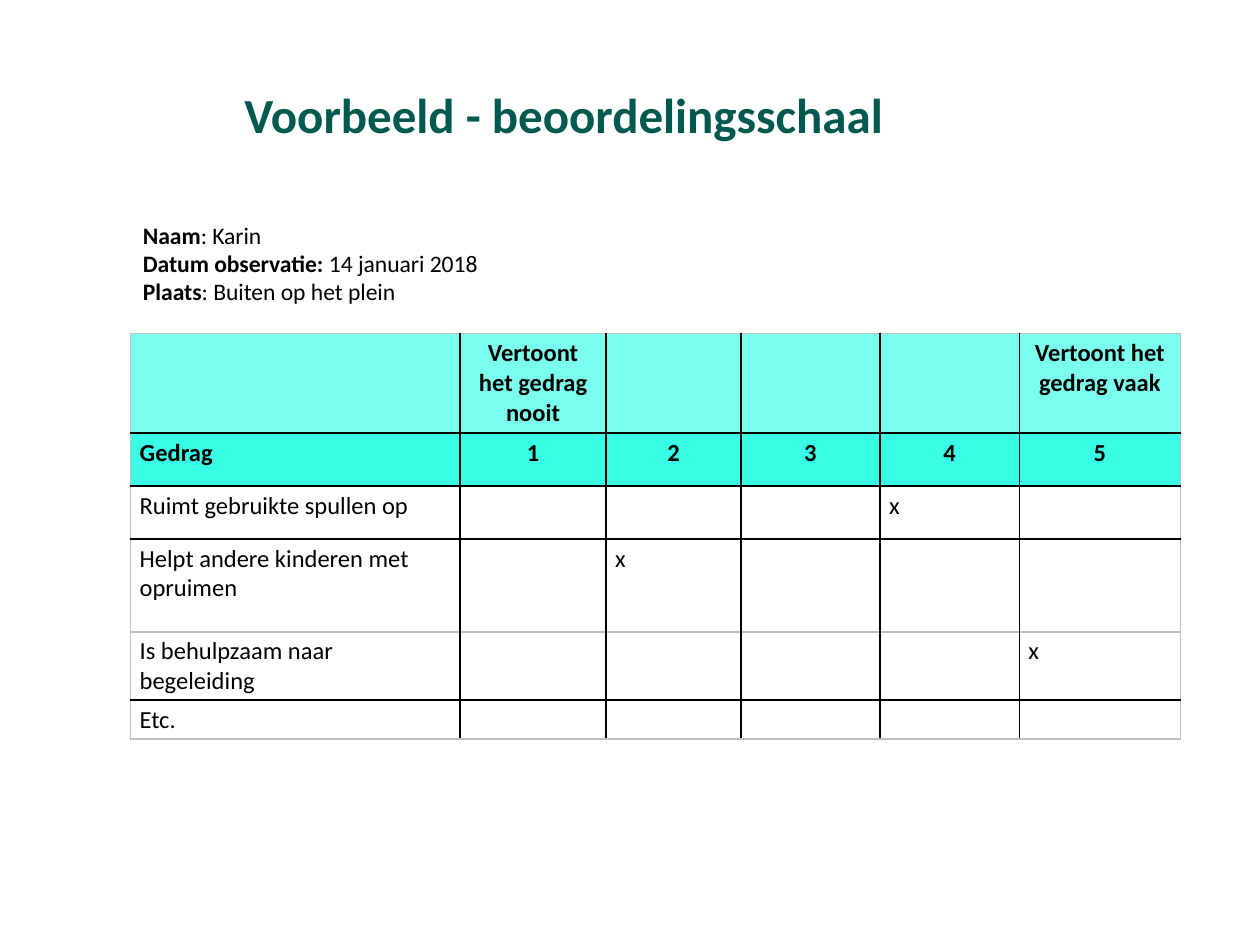
from dataclasses import dataclass

from lxml.etree import SubElement
from pptx import Presentation
from pptx.dml.color import RGBColor
from pptx.enum.text import MSO_ANCHOR, PP_ALIGN
from pptx.oxml import parse_xml
from pptx.oxml.ns import nsdecls, qn
from pptx.util import Pt


@dataclass(frozen=True)
class Theme:
    font: str = "Calibri"
    heading: str = "00594E"
    ink: str = "000000"
    edge: str = "BFBFBF"
    scale_fill: str = "7AFFEF"
    number_fill: str = "38FFE6"
    title_size: float = 28
    detail_size: float = 13.5
    table_size: float = 14


class SlideBuilder:
    """Adds styled text and tables to one slide."""

    def __init__(self, slide, theme):
        self.slide, self.theme = slide, theme

    def add_words(self, paragraph, text, size, color, bold):
        run = paragraph.add_run()
        run.text = text
        style = {"name": self.theme.font, "size": Pt(size), "bold": bold}
        for key, value in style.items():
            setattr(run.font, key, value)
        run.font.color.rgb = RGBColor.from_string(color)

    def text(self, box, lines, size, color, anchor=MSO_ANCHOR.TOP):
        frame = self.slide.shapes.add_textbox(*map(Pt, box)).text_frame
        frame.word_wrap = True
        frame.vertical_anchor = anchor
        for index, line in enumerate(lines):
            paragraph = frame.add_paragraph() if index else frame.paragraphs[0]
            for words, bold in line:
                self.add_words(paragraph, words, size, color, bold)

    def borders(self, cell, outer):
        properties = cell._tc.get_or_add_tcPr()
        for index, (side, is_outer) in enumerate(outer.items()):
            color = self.theme.edge if is_outer else self.theme.ink
            properties.insert(index, parse_xml(
                f'<a:ln{side} {nsdecls("a")} w="{Pt(1)}"><a:solidFill>'
                f'<a:srgbClr val="{color}"/></a:solidFill></a:ln{side}>'))

    def cell(self, cell, text, fill, centred):
        margins = {"margin_left": 5.2, "margin_right": 5.2, "margin_top": 2.7, "margin_bottom": 2.7}
        for key, value in margins.items():
            setattr(cell, key, Pt(value))
        if fill:
            cell.fill.solid()
            cell.fill.fore_color.rgb = RGBColor.from_string(fill)
        else:
            cell.fill.background()
        paragraph = cell.text_frame.paragraphs[0]
        paragraph.alignment = PP_ALIGN.CENTER if centred else PP_ALIGN.LEFT
        size = self.theme.table_size
        if text:
            self.add_words(paragraph, text, size, self.theme.ink, bool(fill))
        else:
            SubElement(paragraph._p, qn("a:endParaRPr"), sz=str(int(size * 100)))

    def table(self, left, top, widths, heights, rows, fills=()):
        box = map(Pt, (left, top, sum(widths), sum(heights)))
        table = self.slide.shapes.add_table(len(rows), len(widths), *box).table
        table.first_row = table.horz_banding = False
        for column, width in zip(table.columns, widths):
            column.width = Pt(width)
        last_row, last_column = len(rows) - 1, len(widths) - 1
        for r, texts in enumerate(rows):
            table.rows[r].height = Pt(heights[r])
            fill = fills[r] if r < len(fills) else None
            for c, text in enumerate(texts):
                cell = table.cell(r, c)
                self.cell(cell, text, fill, bool(fill) and c > 0)
                self.borders(cell, {"L": c == 0, "R": c == last_column,
                                    "T": r == 0, "B": r == last_row})


def rating(behaviour, score=None):
    return [behaviour] + ["x" if value == score else "" for value in range(1, 6)]


def main():
    theme = Theme()
    deck = Presentation()
    deck.slide_width, deck.slide_height = Pt(720), Pt(540)
    builder = SlideBuilder(deck.slides.add_slide(deck.slide_layouts[6]), theme)

    builder.text((132.5, 18, 550.8, 67.7), [[("Voorbeeld - beoordelingsschaal", True)]],
                 theme.title_size, theme.heading, MSO_ANCHOR.BOTTOM)
    builder.text((74.6, 122.6, 573, 56), [
        [("Naam", True), (": Karin", False)],
        [("Datum observatie: ", True), ("14 januari 2018", False)],
        [("Plaats", True), (": Buiten op het plein", False)],
    ], theme.detail_size, theme.ink)

    left, widths = 74.6, (188.3, 83.5, 77, 79.5, 79.7, 92)
    builder.table(left, 190.5, widths, (57, 30.3, 30.3, 53.1), [
        ["", "Vertoont het gedrag nooit", "", "", "", "Vertoont het gedrag vaak"],
        ["Gedrag", "1", "2", "3", "4", "5"],
        rating("Ruimt gebruikte spullen op", 4),
        rating("Helpt andere kinderen met opruimen", 2),
    ], (theme.scale_fill, theme.number_fill))
    builder.table(left, 361, widths, (39, 22.3), [
        rating("Is behulpzaam naar begeleiding", 5),
        rating("Etc."),
    ])
    deck.save("out.pptx")


if __name__ == "__main__":
    main()
